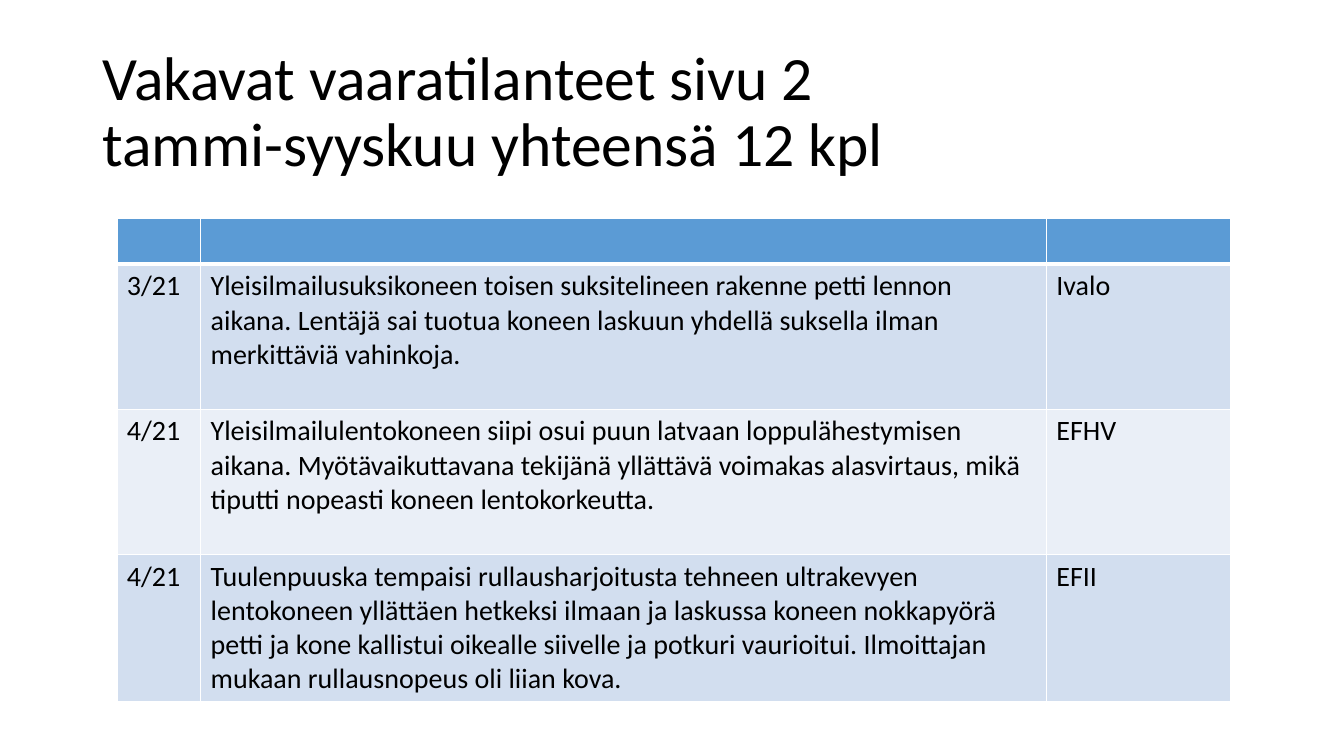
from dataclasses import dataclass
from lxml.etree import SubElement as Sub
from pptx import Presentation
from pptx.dml.color import RGBColor as Rgb
from pptx.enum.text import MSO_ANCHOR as Anchor, PP_ALIGN as Align
from pptx.oxml.ns import qn
from pptx.util import Pt

TITLE = "Vakavat vaaratilanteet sivu 2\vtammi-syyskuu yhteensä 12 kpl"
ROWS = [
    ("", "", ""),
    ("3/21", "Yleisilmailusuksikoneen toisen suksitelineen rakenne petti lennon aikana. "
     "Lentäjä sai tuotua koneen laskuun yhdellä suksella ilman merkittäviä vahinkoja.", "Ivalo"),
    ("4/21", "Yleisilmailulentokoneen siipi osui puun latvaan loppulähestymisen aikana. "
     "Myötävaikuttavana tekijänä yllättävä voimakas alasvirtaus, mikä tiputti nopeasti "
     "koneen lentokorkeutta.", "EFHV"),
    ("4/21", "Tuulenpuuska tempaisi rullausharjoitusta tehneen ultrakevyen lentokoneen "
     "yllättäen hetkeksi ilmaan ja laskussa koneen nokkapyörä petti ja kone kallistui "
     "oikealle siivelle ja potkuri vaurioitui. Ilmoittajan mukaan rullausnopeus oli "
     "liian kova.", "EFII"),
]
WIDTHS = (59.8, 604.1, 131.8)
HEAD, BODY = 32.4, 103.7


@dataclass(frozen=True)
class Theme:
    font: str = "Calibri"
    ink: str = "000000"
    line: str = "FFFFFF"
    head: str = "5B9BD5"
    bands: tuple = ("D2DEEF", "EAEFF7")
    title: int = 44
    body: int = 20


theme = Theme()


def write(frame, text, size, anchor=Anchor.TOP, spacing=1.0):
    frame.text = text
    frame.word_wrap = True
    frame.vertical_anchor = anchor
    for para in frame.paragraphs:
        para.alignment = Align.LEFT
        para.line_spacing = spacing
        for run in para.runs:
            font = run.font
            font.name, font.size, font.bold = theme.font, Pt(size), False
            font.color.rgb = Rgb.from_string(theme.ink)


def border(cell, **widths):
    props = cell._tc.get_or_add_tcPr()
    for side in "LRTB":
        line = Sub(props, qn(f"a:ln{side}"), w=str(Pt(widths.get(side, 1))))
        fill = Sub(line, qn("a:solidFill"))
        Sub(fill, qn("a:srgbClr"), val=theme.line)


def paint(cell, color):
    cell.fill.solid()
    cell.fill.fore_color.rgb = Rgb.from_string(color)


def main():
    deck = Presentation()
    deck.slide_width, deck.slide_height = Pt(960), Pt(540)
    slide = deck.slides.add_slide(deck.slide_layouts[5])

    title = slide.shapes.title
    title.left, title.top, title.width, title.height = Pt(66), Pt(28.8), Pt(828), Pt(104.4)
    write(title.text_frame, TITLE, theme.title, anchor=Anchor.MIDDLE, spacing=0.9)

    tall = HEAD + BODY * (len(ROWS) - 1)
    table = slide.shapes.add_table(len(ROWS), len(WIDTHS), Pt(83.5), Pt(156.2),
                                   Pt(sum(WIDTHS)), Pt(tall)).table
    for col, width in zip(table.columns, WIDTHS):
        col.width = Pt(width)
    for r, texts in enumerate(ROWS):
        table.rows[r].height = Pt(BODY if r else HEAD)
        for c, text in enumerate(texts):
            cell = table.cell(r, c)
            border(cell, T=3 if r == 1 else 1, B=1 if r else 3)
            paint(cell, theme.bands[(r - 1) % 2] if r else theme.head)
            if text:
                write(cell.text_frame, text, theme.body)

    deck.save("out.pptx")


if __name__ == "__main__":
    main()
